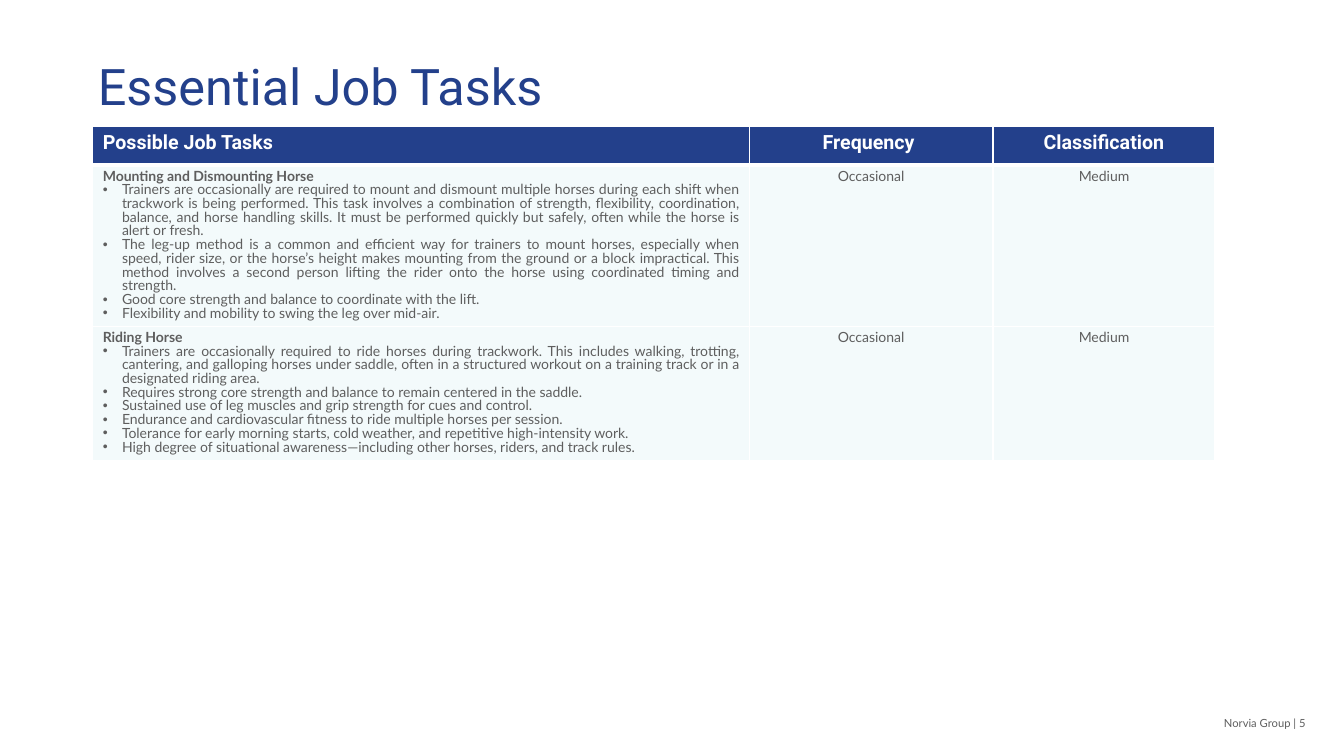
from lxml.etree import SubElement
from pptx import Presentation
from pptx.dml.color import RGBColor
from pptx.enum.text import MSO_ANCHOR as Anchor, PP_ALIGN as Align
from pptx.oxml.ns import qn
from pptx.util import Inches, Pt

COLOURS = {"navy": "23408B", "grey": "5E5E5E", "teal": "24A8C0", "white": "FFFFFF"}
HEADINGS = ["Possible Job Tasks", "Frequency ", "Classification"]
TASKS = [
    ("Mounting and Dismounting Horse", [
        "Trainers are occasionally are required to mount and dismount multiple horses during "
        "each shift when trackwork is being performed. This task involves a combination of "
        "strength, flexibility, coordination, balance, and horse handling skills. It must be "
        "performed quickly but safely, often while the horse is alert or fresh.",
        "The leg-up method is a common and efficient way for trainers to mount horses, "
        "especially when speed, rider size, or the horse’s height makes mounting from the "
        "ground or a block impractical. This method involves a second person lifting the rider "
        "onto the horse using coordinated timing and strength.",
        "Good core strength and balance to coordinate with the lift.",
        "Flexibility and mobility to swing the leg over mid-air.",
    ], "Occasional", "Medium"),
    ("Riding Horse", [
        "Trainers are occasionally required to ride horses during trackwork. This includes "
        "walking, trotting, cantering, and galloping horses under saddle, often in a structured "
        "workout on a training track or in a designated riding area. ",
        "Requires strong core strength and balance to remain centered in the saddle.",
        "Sustained use of leg muscles and grip strength for cues and control.",
        "Endurance and cardiovascular fitness to ride multiple horses per session.",
        "Tolerance for early morning starts, cold weather, and repetitive high-intensity work.",
        "High degree of situational awareness—including other horses, riders, and track rules.",
    ], "Occasional", "Medium"),
]


def add_span(para, text, font, size, colour, bold=False):
    """Add one formatted run to a paragraph."""
    span = para.add_run()
    span.text = text
    span.font.name = font
    span.font.size = Pt(size)
    span.font.bold = bold
    span.font.color.rgb = RGBColor.from_string(COLOURS[colour])


def add_title(page, left, top, width, height):
    """Place the slide title in its placeholder."""
    title = page.shapes.title
    title.left, title.top = Inches(left), Inches(top)
    title.width, title.height = Inches(width), Inches(height)
    title.text_frame.vertical_anchor = Anchor.MIDDLE
    para = title.text_frame.paragraphs[0]
    para.alignment = Align.LEFT
    add_span(para, "Essential Job Tasks", "Roboto", 36, "navy")


def add_footer(page, left, top, width, height):
    """Place the right-aligned footer."""
    box = page.shapes.add_textbox(Inches(left), Inches(top), Inches(width), Inches(height))
    box.text_frame.word_wrap = True
    para = box.text_frame.paragraphs[0]
    para.alignment = Align.RIGHT
    add_span(para, "Norvia Group | 5", "Lato", 8, "grey")


def style_cell(cell, colour, alpha=None, bottom=1):
    """Give a cell white borders and a fill, optionally transparent."""
    props = cell._tc.get_or_add_tcPr()
    for side, points in (("L", 1), ("R", 1), ("T", 1), ("B", bottom)):
        line = SubElement(props, qn(f"a:ln{side}"), w=str(Pt(points)))
        paint = SubElement(line, qn("a:solidFill"))
        SubElement(paint, qn("a:srgbClr"), val=COLOURS["white"])
    cell.fill.solid()
    cell.fill.fore_color.rgb = RGBColor.from_string(COLOURS[colour])
    if alpha:
        shade = props.find(qn("a:solidFill")).find(qn("a:srgbClr"))
        SubElement(shade, qn("a:alpha"), val=str(alpha * 1000))


def add_body_line(para, text, align, bold=False, bullet=False):
    """Fill a paragraph of a body cell."""
    para.alignment = align
    para.line_spacing = Pt(9.8)
    if bullet:
        props = para._p.get_or_add_pPr()
        props.set("marL", str(Inches(0.19)))
        props.set("indent", str(-Inches(0.19)))
        SubElement(props, qn("a:buFont"), typeface="Arial")
        SubElement(props, qn("a:buChar"), char="•")
    add_span(para, text, "Lato", 10, "grey", bold)


def add_task_table(page, left, top, widths, heights):
    """Draw the table of job tasks with its heading row."""
    frame = page.shapes.add_table(
        len(heights), len(widths), Inches(left), Inches(top),
        Inches(sum(widths)), Inches(sum(heights)))
    table = frame.table
    table.horz_banding = False
    for column, width in zip(table.columns, widths):
        column.width = Inches(width)
    for row, height in zip(table.rows, heights):
        row.height = Inches(height)
    for index, heading in enumerate(HEADINGS):
        cell = table.cell(0, index)
        style_cell(cell, "navy", bottom=3)
        para = cell.text_frame.paragraphs[0]
        para.alignment = Align.CENTER if index else Align.LEFT
        add_span(para, heading, "Roboto", 14, "white", True)
    for number, (task, details, *ratings) in enumerate(TASKS, 1):
        for cell in table.rows[number].cells:
            style_cell(cell, "teal", alpha=5)
        frame = table.cell(number, 0).text_frame
        add_body_line(frame.paragraphs[0], task, Align.JUSTIFY, bold=True)
        for detail in details:
            add_body_line(frame.add_paragraph(), detail, Align.JUSTIFY, bullet=True)
        for index, rating in enumerate(ratings, 1):
            para = table.cell(number, index).text_frame.paragraphs[0]
            add_body_line(para, rating, Align.CENTER)


def main():
    """Build and save the deck."""
    deck = Presentation()
    deck.slide_width, deck.slide_height = Inches(13.33), Inches(7.5)
    page = deck.slides.add_slide(deck.slide_layouts[5])
    add_footer(page, 6.38, 7.06, 6.67, 0.24)
    add_title(page, 0.87, 0.49, 6.67, 0.71)
    add_task_table(page, 0.92, 1.25, [6.51, 2.42, 2.2], [0.39, 1.6, 1.32])
    deck.save("out.pptx")


if __name__ == "__main__":
    main()
